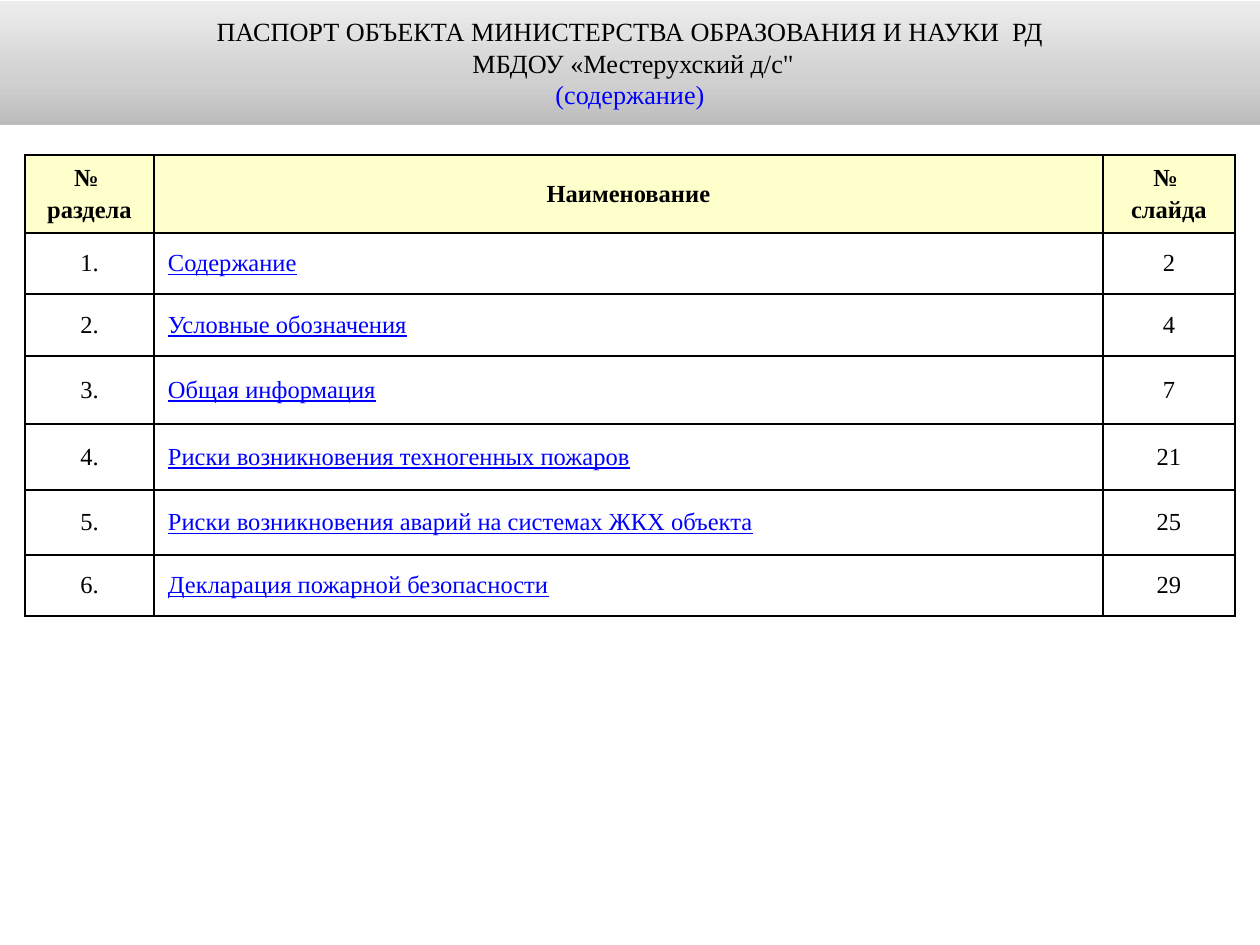
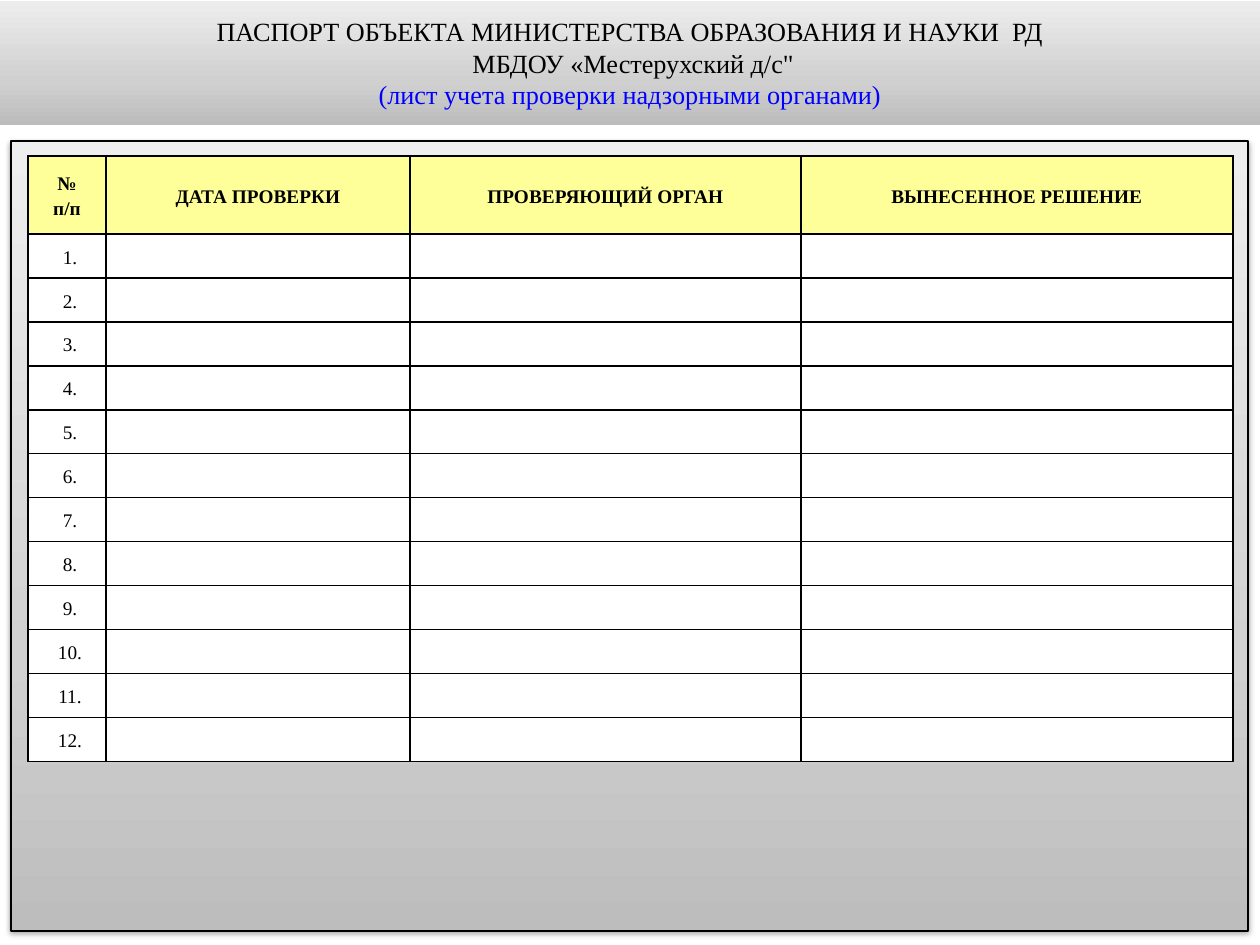
from copy import deepcopy
from lxml.etree import SubElement
from pptx import Presentation
from pptx.dml.color import RGBColor
from pptx.enum.shapes import MSO_SHAPE as SHAPE
from pptx.enum.text import MSO_ANCHOR as ANCHOR, PP_ALIGN as ALIGN
from pptx.oxml.ns import qn
from pptx.util import Inches, Pt

PX = 914400 // 126  # one pixel in EMU
rgb = RGBColor.from_string
FONT = "Times New Roman"
BLACK, BLUE, WHITE = "000000", "0000FF", "FFFFFF"


def add_run(p, text, size, color=BLACK, bold=False, underline=False):
    r = p.add_run()
    r.text = text
    r.font.name, r.font.size = FONT, Pt(size)
    r.font.bold, r.font.underline = bold, underline
    r.font.color.rgb = rgb(color)


def add_gradient_box(s, x, y, w, h, colors):
    sp = s.shapes.add_shape(SHAPE.RECTANGLE, x * PX, y * PX, w * PX, h * PX)
    sp.shadow.inherit = False
    sp.line.fill.background()
    sp.fill.gradient()
    sp.fill.gradient_angle = 90
    stops = sp._element.spPr.find(qn("a:gradFill")).find(qn("a:gsLst"))
    stops.insert(1, deepcopy(stops[0]))
    for stop, color, pos in zip(sp.fill.gradient_stops, colors, (0, 0.35, 1)):
        stop.color.rgb = rgb(color)
        stop.position = pos
    return sp


prs = Presentation()
prs.slide_width, prs.slide_height = Inches(10), Inches(7.5)

# Slides with the shared title band
slides = []
for subtitle in ("(содержание)", "(лист учета проверки надзорными органами)"):
    s = prs.slides.add_slide(prs.slide_layouts[6])
    slides.append(s)
    band = add_gradient_box(s, 0, 1, 1260, 124, ("BCBCBC", "D0D0D0", "EDEDED"))
    tf = band.text_frame
    tf.word_wrap = True
    tf.vertical_anchor = ANCHOR.MIDDLE
    p = tf.paragraphs[0]
    p.alignment = ALIGN.CENTER
    add_run(p, "ПАСПОРТ ОБЪЕКТА МИНИСТЕРСТВА ОБРАЗОВАНИЯ И НАУКИ  РД", 15)
    p.add_line_break()
    add_run(p, " МБДОУ «Местерухский д/с\"", 15)
    p = tf.add_paragraph()
    p.alignment = ALIGN.CENTER
    add_run(p, subtitle, 15, BLUE)

# Panel behind the inspection log
panel = add_gradient_box(slides[1], 11, 141, 1237, 790,
                         ("BDBDBD", "D1D1D1", "EEEEEE"))
panel.line.color.rgb = rgb(BLACK)
panel.line.width = Pt(0.75)
effects = panel._element.spPr.find(qn("a:effectLst"))
shadow = SubElement(effects, qn("a:outerShdw"), blurRad="40000", dist="20000",
                    dir="5400000", rotWithShape="0")
shade = SubElement(shadow, qn("a:srgbClr"), val=BLACK)
SubElement(shade, qn("a:alpha"), val="38000")

# Contents and inspection log
contents = [
    ("№ \nраздела", "Наименование", "№ \nслайда"),
    ("1.", "Содержание", "2"),
    ("2.", "Условные обозначения", "4"),
    ("3.", "Общая информация", "7"),
    ("4.", "Риски возникновения техногенных пожаров", "21"),
    ("5.", "Риски возникновения аварий на системах ЖКХ объекта", "25"),
    ("6.", "Декларация пожарной безопасности", "29"),
]
log = [("№\nп/п", "ДАТА ПРОВЕРКИ", "ПРОВЕРЯЮЩИЙ ОРГАН", "ВЫНЕСЕННОЕ РЕШЕНИЕ")]
log += [(f"{n}.", "", "", "") for n in range(1, 13)]

tables = [
    dict(rows=contents, at=(25, 155), widths=(129, 949, 132),
         heights=(78, 61, 62, 68, 66, 65, 61), size=14, head="FFFFCC",
         inset=(14, 6), spacing=1, gap=2.8, indent=0, link_col=1),
    dict(rows=log, at=(28, 156), widths=(78, 304, 391, 432),
         heights=[78] + [44] * 12, size=11, head="FFFF99",
         inset=(4, 0), spacing=1.15, gap=0, indent=6, link_col=None),
]
for s, t in zip(slides, tables):
    x, y = t["at"]
    widths, heights = t["widths"], t["heights"]
    table = s.shapes.add_table(len(heights), len(widths), x * PX, y * PX,
                               sum(widths) * PX, sum(heights) * PX).table
    table.first_row = table.horz_banding = False
    for col, w in zip(table.columns, widths):
        col.width = w * PX
    for row, h in zip(table.rows, heights):
        row.height = h * PX

    for i, row in enumerate(t["rows"]):
        for j, text in enumerate(row):
            header = i == 0
            link = not header and j == t["link_col"]
            cell = table.cell(i, j)
            cell.vertical_anchor = ANCHOR.MIDDLE
            cell.margin_left = cell.margin_right = t["inset"][0] * PX
            cell.margin_top = cell.margin_bottom = t["inset"][1] * PX

            # Thin black borders, then the fill
            for side in ("a:lnL", "a:lnR", "a:lnT", "a:lnB"):
                ln = SubElement(cell._tc.tcPr, qn(side), w=str(Pt(1)))
                fill = SubElement(ln, qn("a:solidFill"))
                SubElement(fill, qn("a:srgbClr"), val=BLACK)
            cell.fill.solid()
            cell.fill.fore_color.rgb = rgb(t["head"] if header else WHITE)

            if not text:
                continue
            tf = cell.text_frame
            for k, line in enumerate(text.split("\n")):
                p = tf.add_paragraph() if k else tf.paragraphs[0]
                p.alignment = ALIGN.LEFT if link else ALIGN.CENTER
                p.line_spacing = t["spacing"]
                if header:
                    p.space_before = Pt(t["gap"])
                elif j == 0:
                    p._p.get_or_add_pPr().set("marL", str(t["indent"] * PX))
                add_run(p, line, t["size"], BLUE if link else BLACK,
                        header, link)

prs.save("out.pptx")
